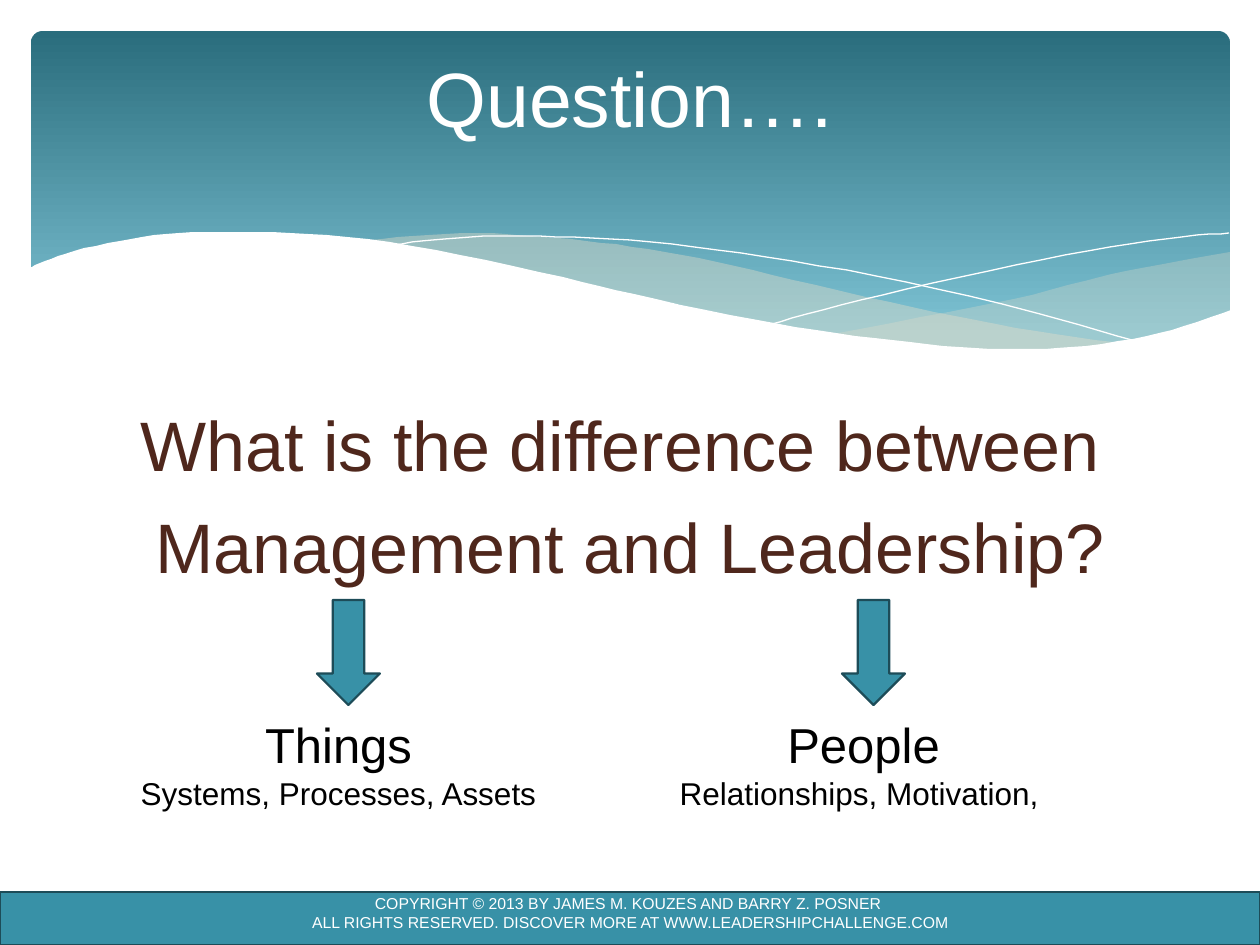
from pptx import Presentation
from pptx.dml.color import RGBColor
from pptx.enum.shapes import MSO_SHAPE
from pptx.enum.text import MSO_ANCHOR, PP_ALIGN
from pptx.oxml.ns import qn
from pptx.util import Emu, Pt

SCALE = 914400 / 126
TEAL, NAVY, SAND, WHITE = "3891A7", "1D4C58", "E7DEC9", "FFFFFF"
BROWN, BLACK = "4F271C", "000000"

RIGHT_VEIL = [
    [(1230, 252), (1142, 268), (1085, 281), (1014, 299), (949, 312), (833, 334)],
    [(833, 334), (888, 341), (954, 348), (1026, 350), (1099, 345), (1160, 334),
     (1230, 311)],
]
LEFT_VEIL = [
    [(1125, 344), (1055, 334), (976, 320), (890, 302), (793, 280), (717, 262),
     (648, 249), (586, 241), (529, 236), (479, 233), (413, 236), (360, 241)],
    [(360, 241), (431, 251), (509, 266), (566, 280), (668, 302), (757, 321),
     (838, 335), (910, 345), (974, 349), (1031, 350), (1080, 349), (1125, 344)],
]
FALLING_LINE = [
    [(389, 246), (422, 241), (471, 237), (524, 236), (591, 238), (672, 244),
     (766, 257), (876, 276), (1002, 304), (1143, 343)],
]
RISING_LINE = [
    [(772, 324), (823, 310), (907, 289), (1016, 265), (1110, 247), (1182, 237),
     (1229, 233)],
]
WHITE_WAVE = [
    [(1231, 310), (1184, 326), (1133, 339), (1071, 347), (1019, 349), (959, 347),
     (892, 340), (816, 330), (730, 315), (634, 294), (563, 277), (460, 255),
     (368, 239), (290, 233), (223, 232), (166, 234), (120, 241), (74, 251),
     (45, 261), (29, 268)],
    [(29, 415), (1231, 415)],
]


def px(value):
    return Emu(round(value * SCALE))


def color(value):
    return RGBColor.from_string(value)


def smooth(knots, steps=4):
    """Return points on a Catmull-Rom curve through the knots."""
    if len(knots) < 3:
        return knots
    padded = [knots[0], *knots, knots[-1]]
    points = []
    for before, start, end, after in zip(padded, padded[1:], padded[2:], padded[3:]):
        for step in range(steps):
            t = step / steps
            points.append(tuple(
                round(b + t * (c - a) / 2
                      + t * t * (2 * a - 5 * b + 4 * c - d) / 2
                      + t ** 3 * (3 * b - a - 3 * c + d) / 2, 2)
                for a, b, c, d in zip(before, start, end, after)))
    return points + [knots[-1]]


def paint(shape, fill=None, line=None, width=1.25, alpha=None):
    shape.shadow.inherit = False
    if fill:
        shape.fill.solid()
        shape.fill.fore_color.rgb = color(fill)
        if alpha:
            solid = shape.fill._xPr.find(qn("a:solidFill"))
            solid[0].makeelement(qn("a:alpha"), {})
            node = solid[0].makeelement(qn("a:alpha"), {"val": str(alpha * 1000)})
            solid[0].append(node)
    else:
        shape.fill.background()
    if line:
        shape.line.color.rgb = color(line)
        shape.line.width = Pt(width)
    else:
        shape.line.fill.background()


def add_preset(page, kind, box, **style):
    shape = page.shapes.add_shape(kind, *map(px, box))
    paint(shape, **style)
    return shape


def add_curve(page, edges, close=True, **style):
    points = [point for edge in edges for point in smooth(edge)]
    builder = page.shapes.build_freeform(*points[0], scale=SCALE)
    builder.add_line_segments(points[1:], close=close)
    paint(builder.convert_to_shape(), **style)


def add_text(page, box, lines, fill, top=6, gap=0, wrap=True):
    """Add centred lines, each a (text, point size) pair."""
    frame = page.shapes.add_textbox(*map(px, box)).text_frame
    settings = {"word_wrap": wrap, "vertical_anchor": MSO_ANCHOR.TOP,
                "margin_top": px(top), "margin_bottom": px(6)}
    for name, value in settings.items():
        setattr(frame, name, value)
    for index, (text, size) in enumerate(lines):
        para = frame.add_paragraph() if index else frame.paragraphs[0]
        para.alignment = PP_ALIGN.CENTER
        if index and gap:
            para.space_before = Pt(gap)
        span = para.add_run()
        span.text = text
        for name, value in {"name": "Arial", "size": Pt(size)}.items():
            setattr(span.font, name, value)
        span.font.color.rgb = color(fill)


def add_banner(page):
    banner = add_preset(page, MSO_SHAPE.ROUNDED_RECTANGLE, (31, 31, 1199, 340))
    banner.adjustments[0] = 0.034
    banner.fill.gradient()
    banner.fill.gradient_angle = 270
    stops = zip(banner.fill.gradient_stops, (0, 0.9), ("2A6D7D", "7EC3D4"))
    for stop, position, value in stops:
        stop.position = position
        stop.color.rgb = color(value)
    add_curve(page, RIGHT_VEIL, fill=SAND, alpha=29)
    add_curve(page, LEFT_VEIL, fill=SAND, alpha=40)
    for edges in (FALLING_LINE, RISING_LINE):
        add_curve(page, edges, close=False, line=WHITE, width=0)
    add_curve(page, WHITE_WAVE, fill=WHITE)


def add_footer(page):
    add_preset(page, MSO_SHAPE.RECTANGLE, (0, 892, 1260, 53), fill=TEAL, line=NAVY)
    add_text(page, (0, 849, 1260, 140), [
        ("COPYRIGHT © 2013 BY JAMES M. KOUZES AND BARRY Z. POSNER ", 9),
        ("ALL RIGHTS RESERVED. DISCOVER MORE AT WWW.LEADERSHIPCHALLENGE.COM", 9),
    ], WHITE, top=58)


def add_answer(page, arrow_left, text_left, text_width, heading, details):
    add_preset(page, MSO_SHAPE.DOWN_ARROW, (arrow_left, 600, 63, 105),
               fill=TEAL, line=NAVY)
    add_text(page, (text_left, 709, text_width, 111),
             [(heading, 28), (details, 18)], BLACK, wrap=False)


def main():
    deck = Presentation()
    deck.slide_width, deck.slide_height = px(1260), px(945)
    page = deck.slides.add_slide(deck.slide_layouts[6])
    add_banner(page)
    add_footer(page)
    add_text(page, (63, 38, 1134, 158), [("Question….", 44)], WHITE, top=13)
    add_text(page, (63, 388, 1134, 456), [
        ("What is the difference between ", 40),
        ("Management and Leadership?", 40),
    ], BROWN, top=14, gap=10)
    add_answer(page, 317, 126, 425, "Things", "Systems, Processes, Assets")
    add_answer(page, 842, 665, 397, "People", "Relationships, Motivation, ")
    deck.save("out.pptx")


if __name__ == "__main__":
    main()
